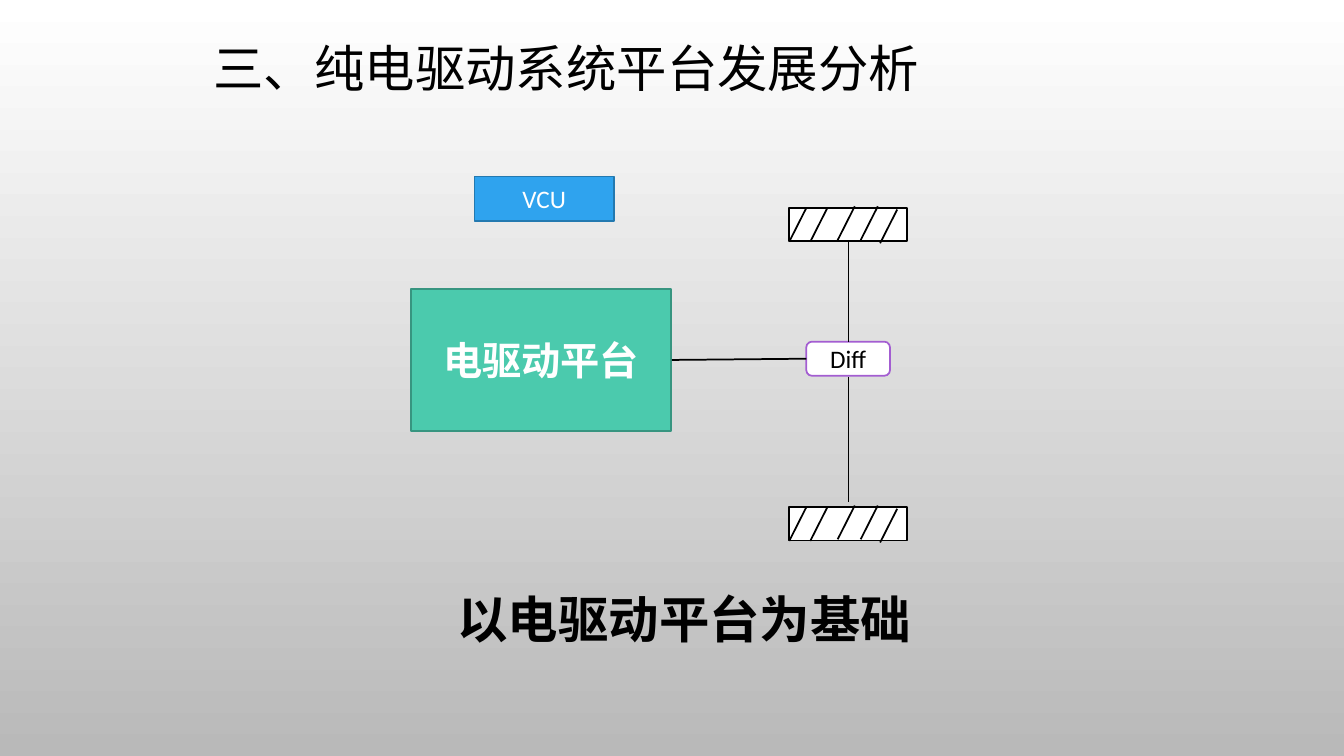
"""Build a slide showing an electric drive platform linked to a differential and two wheels."""
from dataclasses import dataclass

from lxml import etree
from pptx import Presentation
from pptx.dml.color import RGBColor
from pptx.enum.shapes import MSO_CONNECTOR, MSO_SHAPE
from pptx.enum.text import MSO_ANCHOR, MSO_AUTO_SIZE, PP_ALIGN
from pptx.oxml.ns import qn
from pptx.slide import Slide
from pptx.util import Cm, Pt

RECTANGLE = MSO_SHAPE.RECTANGLE
ROUNDED = MSO_SHAPE.ROUNDED_RECTANGLE
STRAIGHT = MSO_CONNECTOR.STRAIGHT
MIDDLE = MSO_ANCHOR.MIDDLE
CENTER = PP_ALIGN.CENTER
FIT_SHAPE = MSO_AUTO_SIZE.SHAPE_TO_FIT_TEXT

BLACK = RGBColor(0x00, 0x00, 0x00)
WHITE = RGBColor(0xFF, 0xFF, 0xFF)
GRAY = RGBColor(0xB9, 0xB9, 0xB9)
TEAL = RGBColor(0x4B, 0xCA, 0xAD)
DARK_TEAL = RGBColor(0x37, 0x95, 0x80)
BLUE = RGBColor(0x2F, 0xA3, 0xEE)
DARK_BLUE = RGBColor(0x23, 0x79, 0xB0)
PURPLE = RGBColor(0xA3, 0x5D, 0xD1)
LINE_WIDTH = Pt(1.25)


@dataclass
class Box:
    left: float
    top: float
    width: float
    height: float
    fill: RGBColor = WHITE
    outline: RGBColor = BLACK
    text: str = ""
    size: int = 18
    color: RGBColor = WHITE
    bold: bool = False
    preset: MSO_SHAPE = RECTANGLE


@dataclass
class Line:
    x1: float
    y1: float
    x2: float
    y2: float


@dataclass
class Caption:
    left: float
    top: float
    width: float
    text: str
    font: str
    bold: bool
    wrap: bool


BOXES = [
    Box(10.36, 7.29, 6.55, 3.58, TEAL, DARK_TEAL, "电驱动平台", 28, bold=True),
    Box(11.96, 4.45, 3.51, 1.12, BLUE, DARK_BLUE, "VCU"),
    Box(20.32, 8.61, 2.11, 0.86, outline=PURPLE, text="Diff", color=BLACK, preset=ROUNDED),
]
SHAFTS = [
    Line(16.93, 9.07, 20.32, 9.04),
    Line(21.38, 8.61, 21.38, 6.1),
    Line(21.38, 9.49, 21.38, 12.65),
]
CAPTIONS = [
    Caption(11.28, 14.7, 13.23, "以电驱动平台为基础", "Arial", True, True),
    Caption(5.13, 0.82, 18.47, "三、纯电驱动系统平台发展分析", "Calibri", False, False),
]
WHEEL_LEFT = 19.89
WHEEL_TOPS = (5.24, 12.78)
HATCH_STARTS = ((0, 0.85), (0.53, 0.85), (1.22, 0.81), (1.8, 0.81), (2.29, 0.89))
HATCH_RUN, HATCH_RISE = 0.43, 0.85


def paint_background(slide: Slide) -> None:
    fill = slide.background.fill
    fill.gradient()
    fill.gradient_angle = 270
    for stop, color in zip(fill.gradient_stops, (WHITE, GRAY)):
        stop.color.rgb = color


def add_box(slide: Slide, box: Box) -> None:
    shape = slide.shapes.add_shape(
        box.preset, Cm(box.left), Cm(box.top), Cm(box.width), Cm(box.height))
    shape.shadow.inherit = False
    shape.fill.solid()
    shape.fill.fore_color.rgb = box.fill
    shape.line.color.rgb = box.outline
    shape.line.width = LINE_WIDTH
    if box.text:
        frame = shape.text_frame
        frame.text = box.text
        frame.vertical_anchor = MIDDLE
        paragraph = frame.paragraphs[0]
        paragraph.alignment = CENTER
        paragraph.font.name = "Calibri"
        paragraph.font.size = Pt(box.size)
        paragraph.font.bold = box.bold
        paragraph.font.color.rgb = box.color


def add_line(slide: Slide, line: Line) -> None:
    connector = slide.shapes.add_connector(
        STRAIGHT, Cm(line.x1), Cm(line.y1), Cm(line.x2), Cm(line.y2))
    connector.line.color.rgb = BLACK
    connector.line.width = LINE_WIDTH
    etree.SubElement(connector._element.spPr, qn("a:effectLst"))


def add_wheel(slide: Slide, top: float) -> None:
    add_box(slide, Box(WHEEL_LEFT, top, 2.97, 0.84))
    for offset, drop in HATCH_STARTS:
        x, y = WHEEL_LEFT + offset, top + drop
        add_line(slide, Line(x, y, x + HATCH_RUN, y - HATCH_RISE))


def add_caption(slide: Slide, caption: Caption) -> None:
    shape = slide.shapes.add_textbox(
        Cm(caption.left), Cm(caption.top), Cm(caption.width), Cm(1.8))
    frame = shape.text_frame
    frame.text = caption.text
    frame.word_wrap = caption.wrap
    frame.auto_size = FIT_SHAPE
    paragraph = frame.paragraphs[0]
    paragraph.font.name = caption.font
    paragraph.font.size = Pt(36)
    paragraph.font.bold = caption.bold
    paragraph.font.color.rgb = BLACK


def main() -> None:
    presentation = Presentation()
    presentation.slide_width = Cm(33.87)
    presentation.slide_height = Cm(19.05)
    slide = presentation.slides.add_slide(presentation.slide_layouts[6])
    paint_background(slide)
    for box in BOXES:
        add_box(slide, box)
    for shaft in SHAFTS:
        add_line(slide, shaft)
    for top in WHEEL_TOPS:
        add_wheel(slide, top)
    for caption in CAPTIONS:
        add_caption(slide, caption)
    presentation.save("out.pptx")


if __name__ == "__main__":
    main()
